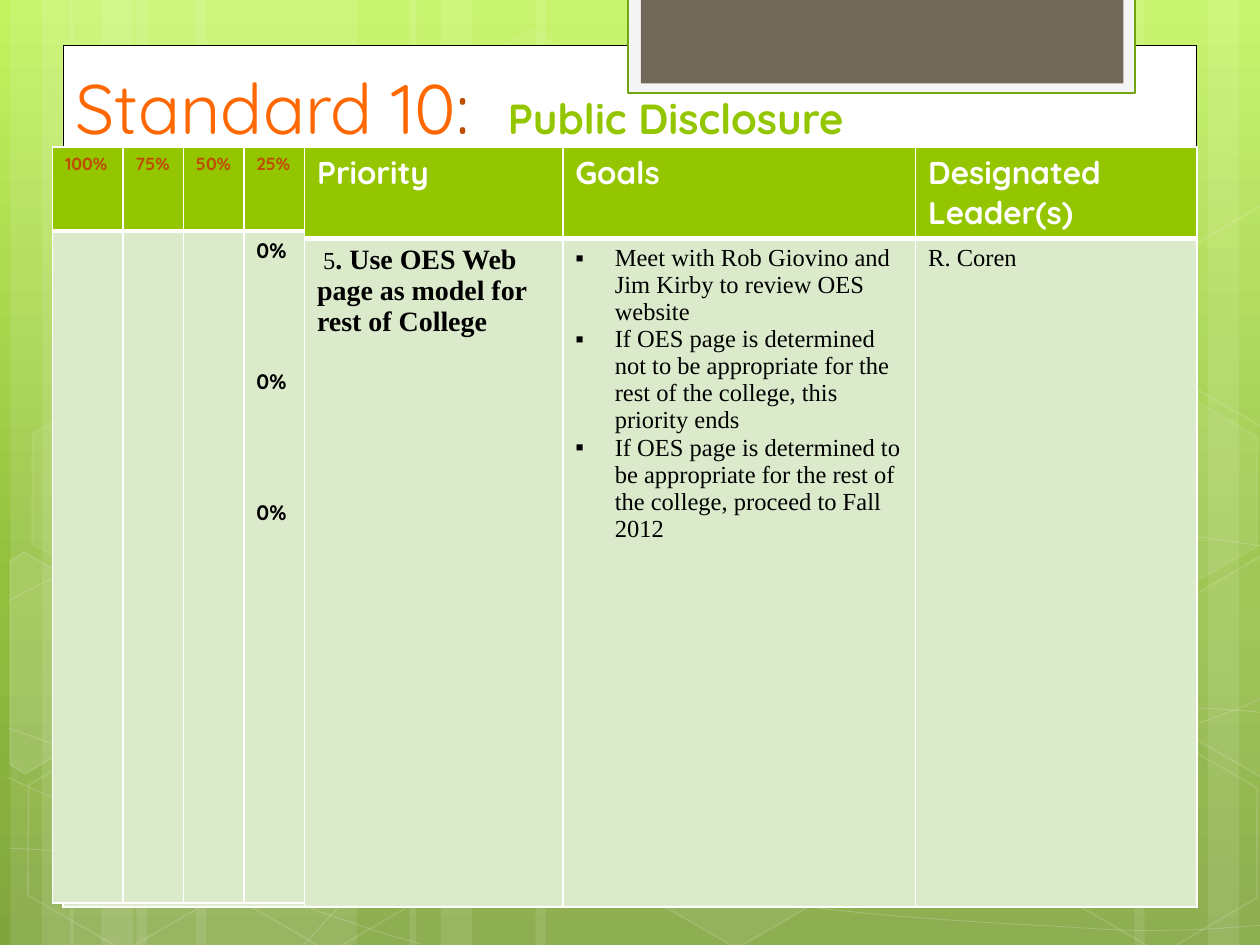
"""Build the Standard 10 public disclosure slide with its priority and progress tables."""
import math
from copy import deepcopy

from lxml import etree
from pptx import Presentation
from pptx import util as u
from pptx.dml.color import RGBColor
from pptx.enum import shapes, text
from pptx.oxml.ns import qn

WHITE = RGBColor(0xFF, 0xFF, 0xFF)
BLACK = RGBColor(0x00, 0x00, 0x00)
LIME = RGBColor(0x94, 0xC6, 0x00)
PALE = RGBColor(0xDC, 0xEA, 0xCC)
ORANGE = RGBColor(0xFF, 0x67, 0x00)
RUST = RGBColor(0xBF, 0x4D, 0x00)
SMOKE = RGBColor(0xF5, 0xF5, 0xF5)
GREEN = RGBColor(0x74, 0xA5, 0x10)
TAUPE = RGBColor(0x71, 0x68, 0x5A)
GRADIENT = [(0, RGBColor(0xC3, 0xF3, 0x5F)), (0.62, RGBColor(0x93, 0xBF, 0x3F)),
            (1, RGBColor(0x81, 0xA5, 0x3E))]
SANS, SERIF = "Quicksand", "Times New Roman"


def write(p, words, size=14, color=BLACK, bold=False, font=SANS):
    r = p.add_run()
    r.text = words
    r.font.size, r.font.bold, r.font.name = u.Pt(size), bold, font
    r.font.color.rgb = color


def paint(sp, fill=None, line=None, width=1, fill_alpha=100, line_alpha=100):
    sp.shadow.inherit = False
    for part, color in ((sp.fill, fill), (sp.line.fill, line)):
        if color is None:
            part.background()
        else:
            part.solid()
            part.fore_color.rgb = color
    if line is not None:
        sp.line.width = u.Pt(width)
    spPr = sp._element.spPr
    for route, alpha in (("a:solidFill", fill_alpha), ("a:ln", line_alpha)):
        node = spPr.find(qn(route))
        if alpha < 100 and node is not None:
            clr = next(node.iter(qn("a:srgbClr")))
            etree.SubElement(clr, qn("a:alpha"), val=str(alpha * 1000))


prs = Presentation()
prs.slide_width, prs.slide_height = u.Pt(720), u.Pt(540)
s = prs.slides.add_slide(prs.slide_layouts[6])

bg = s.background.fill
bg.gradient()
bg.gradient_angle = 270
stops = s._element.find(".//" + qn("a:gsLst"))
stops.append(deepcopy(stops[-1]))
for stop, (position, color) in zip(bg.gradient_stops, GRADIENT):
    stop.position, stop.color.rgb = position, color

stripes = [(78, 126, 0), (6, 36, 0), (24, 60, 0), (112, 126, 0), (40, 36, 0), (58, 60, 0),
           (528, 126, 180), (690, 36, 180), (648, 60, 180), (306, 222, 0), (234, 36, 0),
           (252, 60, 0)]
for x, w, turn in stripes:
    sp = s.shapes.add_shape(shapes.MSO_SHAPE.RECTANGLE, u.Pt(x), 0, u.Pt(w), u.Pt(540))
    sp.rotation = turn
    paint(sp, WHITE, fill_alpha=10)

curves = [
    [(5, 484.6), (43.9, 486.7), (82.8, 488.9), (136.8, 488.2), (190.8, 487.4), (257.8, 486),
     (329.8, 478.8), (401.8, 471.6), (504, 457.9), (570.2, 444.2), (637, 430.6), (703.4, 409),
     (725, 396.7)],
    [(5, 343.4), (25.9, 332), (46.8, 321.1), (87.1, 310.3), (128.2, 299.5), (186.5, 283.7),
     (249.8, 278.6), (313.9, 273.6), (391.7, 272.9), (470.9, 278.6), (550.1, 284.4),
     (681.8, 306.7), (725, 312.5)],
    [(4.3, 444.2), (91.4, 483.8), (177.8, 523.4), (240.5, 539.3)],
    [(5, 416.2), (27.4, 424.1), (50.4, 432), (92.2, 443.5), (133.9, 454.3), (196.6, 472.3),
     (257, 484.6), (316.8, 496.8), (392.4, 509.8), (452.2, 517), (511.9, 524.9), (576, 527.8),
     (614.2, 529.9), (651.6, 532.8), (661.7, 531.4), (680.4, 531.4), (699.1, 530.6),
     (712.1, 529.2), (725, 528.5)],
    [(174.2, 539.3), (187.2, 524.9), (200.2, 510.5), (217.4, 497.5), (234.7, 484.6),
     (259.2, 470.2), (279.4, 460.1), (299.5, 450), (311.8, 445.7), (338.4, 438.5),
     (364.3, 431.3), (412.6, 421.2), (437.8, 416.2), (463.7, 411.1), (467.3, 411.1),
     (489.6, 409.7), (511.9, 407.5), (547.2, 405.4), (571.7, 404.6), (596.9, 403.9),
     (637.9, 404.6), (637.9, 404.6), (686.2, 404.6), (699.1, 405.4), (711.4, 406.1),
     (717.8, 406.8), (724.3, 407.5), (722.2, 406.8), (724.3, 407.5)],
]
STRAIGHT = (686.2, 404.6)
for curve in curves:
    points = [(u.Pt(x), u.Pt(y)) for x, y in curve]
    fb = s.shapes.build_freeform(*points[0])
    fb.add_line_segments(points[1:], close=False)
    sp = fb.convert_to_shape()
    segments = list(sp._element.iter(qn("a:lnTo")))
    i = 0
    while i < len(segments):
        if curve[i + 1] == STRAIGHT:
            i += 1
            continue
        bezier = etree.Element(qn("a:cubicBezTo"))
        segments[i].addprevious(bezier)
        for segment in segments[i:i + 3]:
            bezier.append(segment[0])
            segment.getparent().remove(segment)
        i += 3
    paint(sp, line=WHITE, width=0.5, line_alpha=20)

hexagons = [(240.5, 25.9, 4, 8), (357.8, 424.1, 6, 12), (7.9, 425.5, 0, 12),
            (10.1, 224.6, 7, 8), (125.3, 426.2, 0, 12), (542.2, 326.2, 10, 12),
            (600.5, 427, 0, 12), (600.5, 226.1, 7, 8)]
for x, y, fill_alpha, line_alpha in hexagons:
    sp = s.shapes.add_shape(shapes.MSO_SHAPE.HEXAGON, u.Pt(x), u.Pt(y), u.Pt(126), u.Pt(109.4))
    sp.adjustments[0] = 0.285
    sp.rotation = 30
    paint(sp, WHITE if fill_alpha else None, WHITE, 1, fill_alpha, line_alpha)

cut_hexagons = [
    ((25.9, 385.2), [(5.8, 320.4), (13.7, 315.4), (69.1, 347), (68.4, 410.4), (14.4, 442.1),
                     (5.8, 437)], 10),
    ((709.2, 374.4), [(666.7, 349.2), (720.7, 317.5), (726.5, 321.1), (726.5, 441.4),
                      (721.4, 444.2), (666.7, 412.6)], 4),
    ((709.2, 173.5), [(666.7, 149), (720.7, 117.4), (727.2, 121), (726.5, 241.2),
                      (721.4, 244.1), (666.7, 212.4)], 0),
]
cos, sin = math.cos(math.radians(30)), math.sin(math.radians(30))
for (cx, cy), corners, fill_alpha in cut_hexagons:
    points = [(u.Pt(cx + (x - cx) * cos + (y - cy) * sin),
               u.Pt(cy - (x - cx) * sin + (y - cy) * cos)) for x, y in corners]
    fb = s.shapes.build_freeform(*points[0])
    fb.add_line_segments(points[1:], close=True)
    sp = fb.convert_to_shape()
    sp.rotation = 30
    paint(sp, WHITE if fill_alpha else None, WHITE, 1, fill_alpha, 12)

panels = [((36, 25.9, 648, 486.7), WHITE, BLACK, 0.5),
          ((359, -1.4, 289.6, 54.7), SMOKE, GREEN, 1.25),
          ((366.2, -1.4, 275.8, 49), TAUPE, None, 0)]
for box, fill, line, width in panels:
    sp = s.shapes.add_shape(shapes.MSO_SHAPE.RECTANGLE, *map(u.Pt, box))
    paint(sp, fill, line, width)

tf = s.shapes.add_textbox(u.Pt(36), u.Pt(-1.4), u.Pt(648), u.Pt(90)).text_frame
tf.word_wrap = True
tf.vertical_anchor = text.MSO_ANCHOR.BOTTOM
p = tf.paragraphs[0]
write(p, "Standard 10", size=40, color=ORANGE)
write(p, ":  ", size=40, color=RUST)
write(p, "Public Disclosure", size=24, color=LIME, bold=True)

grids = []
for x, widths, heights in ((36, (138, 147.6, 201.6, 160.8), (52.2, 382)),
                           (30, (40.2, 34.6, 34.6, 34.6), (48, 384))):
    frame = s.shapes.add_table(2, 4, u.Pt(x), u.Pt(84), u.Pt(sum(widths)), u.Pt(sum(heights)))
    table = frame.table
    grids.append(table)
    for column, w in zip(table.columns, widths):
        column.width = u.Pt(w)
    for i, h in enumerate(heights):
        table.rows[i].height = u.Pt(h)
        for cell in table.rows[i].cells:
            tcPr = cell._tc.get_or_add_tcPr()
            for side in "LRTB":
                heavy = (i, side) in ((0, "B"), (1, "T"))
                ln = etree.SubElement(tcPr, qn("a:ln" + side), w=str(u.Pt(3 if heavy else 1)))
                solid = etree.SubElement(ln, qn("a:solidFill"))
                etree.SubElement(solid, qn("a:srgbClr"), val=str(WHITE))
            cell.fill.solid()
            cell.fill.fore_color.rgb = PALE if i else LIME
priorities, progress = grids

for j, heading in enumerate(("Priority", "Goals", "Designated Leader(s)"), 1):
    write(priorities.cell(0, j).text_frame.paragraphs[0], heading, size=18, color=WHITE, bold=True)
p = priorities.cell(1, 1).text_frame.paragraphs[0]
write(p, " 5", font=SERIF)
write(p, ". Use OES Web page as model for rest of College", size=16, bold=True, font=SERIF)
write(priorities.cell(1, 3).text_frame.paragraphs[0], "R. Coren", font=SERIF)

goals = ["Meet with Rob Giovino and Jim Kirby to review OES website",
         "If OES page is determined not to be appropriate for the rest of the college, "
         "this priority ends",
         "If OES page is determined to be appropriate for the rest of the college, "
         "proceed to Fall 2012"]
tf = priorities.cell(1, 2).text_frame
for i, goal in enumerate(goals):
    p = tf.add_paragraph() if i else tf.paragraphs[0]
    pPr = p._p.get_or_add_pPr()
    pPr.set("marL", str(u.Pt(22.5)))
    pPr.set("indent", str(u.Pt(-22.5)))
    etree.SubElement(pPr, qn("a:buFont"), typeface=SERIF)
    etree.SubElement(pPr, qn("a:buChar"), char="▪")
    write(p, goal, font=SERIF)

for j, heading in enumerate(("100%", "75%", "50%", "25%")):
    write(progress.cell(0, j).text_frame.paragraphs[0], heading, size=10, color=RUST, bold=True)
tf = progress.cell(1, 3).text_frame
for i in range(len(goals)):
    p = tf.add_paragraph() if i else tf.paragraphs[0]
    p.space_before = u.Pt(60 if i else 0)
    write(p, "0%", size=12, bold=True)

prs.save("out.pptx")
